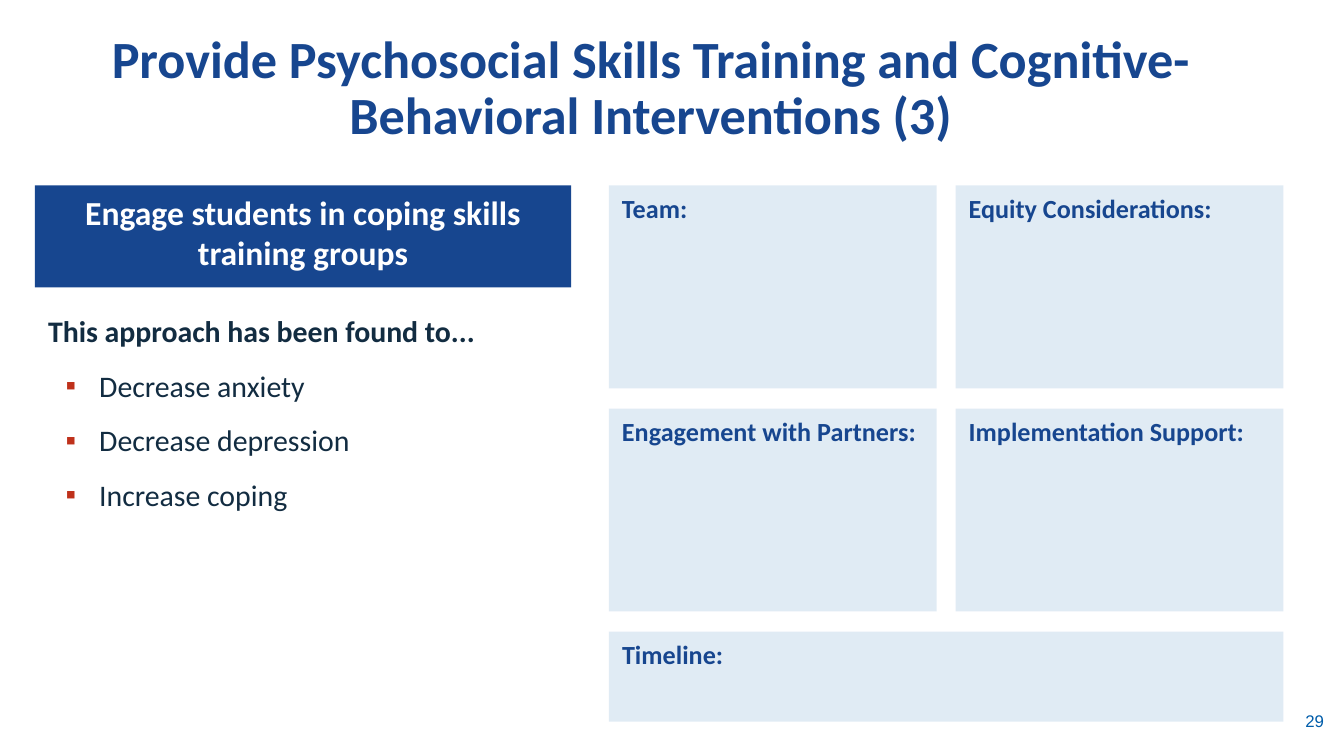
from dataclasses import dataclass
from pptx import Presentation
from pptx.dml.color import RGBColor as Rgb
from pptx.enum.shapes import MSO_SHAPE as Kind
from pptx.enum.text import MSO_ANCHOR as Anchor, PP_ALIGN as Align
from pptx.oxml.ns import qn
from pptx.util import Inches, Pt
from lxml.etree import SubElement as Sub


@dataclass(frozen=True)
class Theme:
    navy: str = "17468F"
    ink: str = "122C41"
    white: str = "FFFFFF"
    pale: str = "86B2D7"
    red: str = "BF311B"
    blue: str = "015DAA"
    font: str = "Calibri"
    title: int = 28
    head: int = 18
    body: int = 16
    label: int = 14
    page: int = 9


def write(par, text, size, color, bold=True, align=Align.LEFT, face=Theme.font):
    par.text = text
    par.alignment = align
    font = par.font
    font.name, font.size, font.bold = face, Pt(size), bold
    font.color.rgb = Rgb.from_string(color)


def place(x, y, w, h, fill=None, anchor=Anchor.TOP):
    area = [Inches(v) for v in (x, y, w, h)]
    if fill:
        shape = slide.shapes.add_shape(Kind.RECTANGLE, *area)
        shape.shadow.inherit = False
        shape.fill.solid()
        shape.fill.fore_color.rgb = Rgb.from_string(fill)
        shape.line.fill.background()
    else:
        shape = slide.shapes.add_textbox(*area)
    shape.text_frame.word_wrap = True
    shape.text_frame.vertical_anchor = anchor
    return shape


theme = Theme()
deck = Presentation()
deck.slide_width = Inches(10)
deck.slide_height = deck.slide_width * 9 // 16
slide = deck.slides.add_slide(deck.slide_layouts[6])

title = place(0.34, 0.19, 9, 0.94, anchor=Anchor.BOTTOM).text_frame.paragraphs[0]
write(title, "Provide Psychosocial Skills Training and Cognitive-Behavioral Interventions (3)",
      theme.title, theme.navy, align=Align.CENTER)
title.line_spacing = Pt(30)

left, top, wide = 0.26, 1.38, 3.99
head = place(left, top, wide, 0.76, theme.navy).text_frame
write(head.paragraphs[0], "Engage students in coping skills training groups",
      theme.head, theme.white, align=Align.CENTER)

body = place(left, top + 0.9, wide, 1.51).text_frame
write(body.paragraphs[0], "This approach has been found to...", theme.body, theme.ink)
for text in ("Decrease anxiety", "Decrease depression", "Increase coping"):
    par = body.add_paragraph()
    par.space_before = Pt(10)
    props = par._p.get_or_add_pPr()
    props.set("marL", str(Inches(0.38)))
    props.set("indent", str(Inches(-0.25)))
    Sub(Sub(props, qn("a:buClr")), qn("a:srgbClr"), val=theme.red)
    Sub(props, qn("a:buFont"), typeface="Arial")
    Sub(props, qn("a:buChar"), char="▪")
    write(par, text, theme.body, theme.ink, bold=False)

start, cell, tall, gap = 4.53, 2.44, 1.51, 0.14
step = 1.655
panels = [
    ("Team:", 0, 0, 1, tall),
    ("Equity Considerations:", 1, 0, 1, tall),
    ("Engagement with Partners:", 0, 1, 1, tall),
    ("Implementation Support:", 1, 1, 1, tall),
    ("Timeline:", 0, 2, 2, 0.67),
]
step = round((4.69 - top) / 2, 2)
for text, col, row, span, high in panels:
    panel = place(start + col * (cell + gap), top + row * step,
                  span * cell + (span - 1) * gap, high, theme.pale)
    tint = panel.fill._xPr.find(qn("a:solidFill"))[0]
    Sub(tint, qn("a:alpha"), val="25000")
    write(panel.text_frame.paragraphs[0], text, theme.label, theme.navy)

page = place(9.09, 5.24, 0.86, 0.3).text_frame.paragraphs[0]
write(page, "29", theme.page, theme.blue, False, Align.RIGHT, "Arial")

deck.save("out.pptx")
